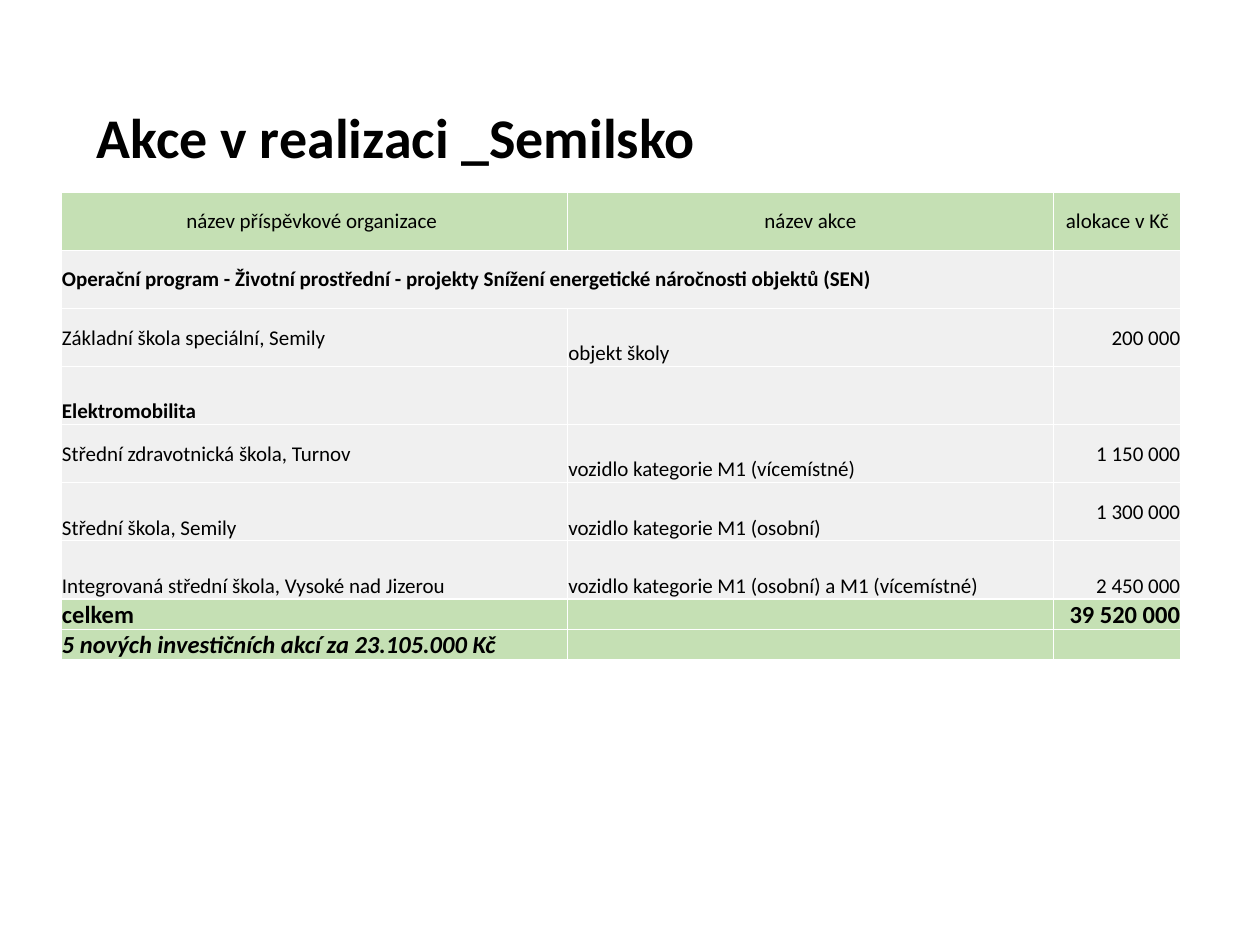
"""Build the slide listing investment projects in the Semily region."""
from dataclasses import dataclass

from lxml import etree
from pptx import Presentation
from pptx.dml.color import RGBColor
from pptx.enum.text import MSO_ANCHOR, MSO_AUTO_SIZE, PP_ALIGN
from pptx.oxml.ns import qn
from pptx.slide import Slide
from pptx.table import _Cell
from pptx.text.text import TextFrame
from pptx.util import Length, Pt

LEFT, CENTER, RIGHT = PP_ALIGN.LEFT, PP_ALIGN.CENTER, PP_ALIGN.RIGHT
MIDDLE, BOTTOM = MSO_ANCHOR.MIDDLE, MSO_ANCHOR.BOTTOM
FIT_SHAPE = MSO_AUTO_SIZE.SHAPE_TO_FIT_TEXT
TITLE_ONLY = 5


@dataclass(frozen=True)
class Theme:
    """Colours, font and type sizes of the slide."""
    font: str = "Calibri"
    text: RGBColor = RGBColor(0, 0, 0)
    accent: RGBColor = RGBColor(0xC5, 0xE0, 0xB4)
    body: RGBColor = RGBColor(0xF0, 0xF0, 0xF0)
    border: str = "FFFFFF"
    title_size: Length = Pt(32)
    body_size: Length = Pt(12)
    total_size: Length = Pt(14)


@dataclass(frozen=True)
class Entry:
    """Text of one cell with its placement."""
    text: str = ""
    anchor: MSO_ANCHOR = BOTTOM
    align: PP_ALIGN = LEFT


@dataclass(frozen=True)
class RowStyle:
    """Look shared by the cells of a row."""
    fill: RGBColor
    size: Length
    height: Length
    bold: bool = False
    italic: bool = False


THEME = Theme()
TALL, SHORT = Pt(33.2), Pt(17.4)
HEADER = RowStyle(THEME.accent, THEME.body_size, TALL)
GROUP = RowStyle(THEME.body, THEME.body_size, TALL, bold=True)
PROJECT = RowStyle(THEME.body, THEME.body_size, TALL)
TOTAL = RowStyle(THEME.accent, THEME.total_size, SHORT, bold=True)
SUMMARY = RowStyle(THEME.accent, THEME.total_size, SHORT, bold=True, italic=True)
EMPTY = Entry()
COLUMN_WIDTHS = (Pt(289.4), Pt(277.8), Pt(73))
GROUP_ROW = 1

ROWS: list[tuple[RowStyle, tuple[Entry, Entry, Entry]]] = [
    (HEADER, (Entry("název příspěvkové organizace ", MIDDLE, CENTER),
              Entry("název akce", MIDDLE, CENTER),
              Entry("alokace v Kč", MIDDLE, CENTER))),
    (GROUP, (Entry("Operační program - Životní prostřední - projekty "
                   "Snížení energetické náročnosti objektů (SEN)", MIDDLE),
             EMPTY, EMPTY)),
    (PROJECT, (Entry("Základní škola speciální, Semily", MIDDLE),
               Entry("objekt školy"),
               Entry("200 000", MIDDLE, RIGHT))),
    (GROUP, (Entry("Elektromobilita"), EMPTY, EMPTY)),
    (PROJECT, (Entry("Střední zdravotnická škola, Turnov", MIDDLE),
               Entry("vozidlo kategorie M1 (vícemístné)"),
               Entry("1 150 000", MIDDLE, RIGHT))),
    (PROJECT, (Entry("Střední škola, Semily"),
               Entry("vozidlo kategorie M1 (osobní)"),
               Entry("1 300 000", MIDDLE, RIGHT))),
    (PROJECT, (Entry("Integrovaná střední škola, Vysoké nad Jizerou"),
               Entry("vozidlo kategorie M1 (osobní) a M1 (vícemístné)"),
               Entry("2 450 000", BOTTOM, RIGHT))),
    (TOTAL, (Entry("celkem"), EMPTY, Entry("39 520 000", BOTTOM, RIGHT))),
    (SUMMARY, (Entry("5 nových investičních akcí za 23.105.000 Kč"), EMPTY, EMPTY)),
]


def write_text(frame: TextFrame, text: str, size: Length, align: PP_ALIGN,
               bold: bool, italic: bool = False) -> None:
    """Write one formatted run, or size the empty paragraph."""
    paragraph = frame.paragraphs[0]
    paragraph.alignment = align
    if not text:
        end = etree.SubElement(paragraph._p, qn("a:endParaRPr"))
        end.set("sz", str(int(size.pt * 100)))
        return
    run = paragraph.add_run()
    run.text = text
    run.font.name = THEME.font
    run.font.size = size
    run.font.bold = bold
    run.font.italic = italic
    run.font.color.rgb = THEME.text


def add_borders(cell: _Cell) -> None:
    """Draw a thin border on all four sides of a cell."""
    properties = cell._tc.get_or_add_tcPr()
    for side in ("lnL", "lnR", "lnT", "lnB"):
        line = etree.SubElement(properties, qn(f"a:{side}"), w=str(Pt(1)))
        fill = etree.SubElement(line, qn("a:solidFill"))
        etree.SubElement(fill, qn("a:srgbClr"), val=THEME.border)


def format_cell(cell: _Cell, entry: Entry, style: RowStyle) -> None:
    """Fill, border and write one table cell."""
    add_borders(cell)
    cell.fill.solid()
    cell.fill.fore_color.rgb = style.fill
    cell.margin_left = cell.margin_right = cell.margin_top = Pt(0.6)
    cell.margin_bottom = Pt(0)
    cell.vertical_anchor = entry.anchor
    write_text(cell.text_frame, entry.text, style.size, entry.align,
               style.bold, style.italic)


def add_title(slide: Slide, text: str) -> None:
    """Place and write the slide title."""
    title = slide.shapes.title
    title.left, title.top = Pt(48.2), Pt(54.7)
    title.width, title.height = Pt(601.2), Pt(46)
    frame = title.text_frame
    frame.word_wrap = True
    frame.auto_size = FIT_SHAPE
    write_text(frame, text, THEME.title_size, LEFT, bold=True)


def add_project_table(slide: Slide) -> None:
    """Add the table of projects and their allocations."""
    height = sum(style.height for style, _ in ROWS)
    table = slide.shapes.add_table(len(ROWS), len(COLUMN_WIDTHS), Pt(34.8), Pt(109.8),
                                   sum(COLUMN_WIDTHS), height).table
    table.first_row = table.horz_banding = False
    for column, width in zip(table.columns, COLUMN_WIDTHS):
        column.width = width
    for row, (style, entries) in zip(table.rows, ROWS):
        row.height = style.height
        for cell, entry in zip(row.cells, entries):
            format_cell(cell, entry, style)
    table.cell(GROUP_ROW, 0).merge(table.cell(GROUP_ROW, 1))


def main() -> None:
    """Build and save the presentation."""
    presentation = Presentation()
    presentation.slide_width, presentation.slide_height = Pt(720), Pt(540)
    slide = presentation.slides.add_slide(presentation.slide_layouts[TITLE_ONLY])
    add_title(slide, "Akce v realizaci _Semilsko")
    add_project_table(slide)
    presentation.save("out.pptx")


if __name__ == "__main__":
    main()
